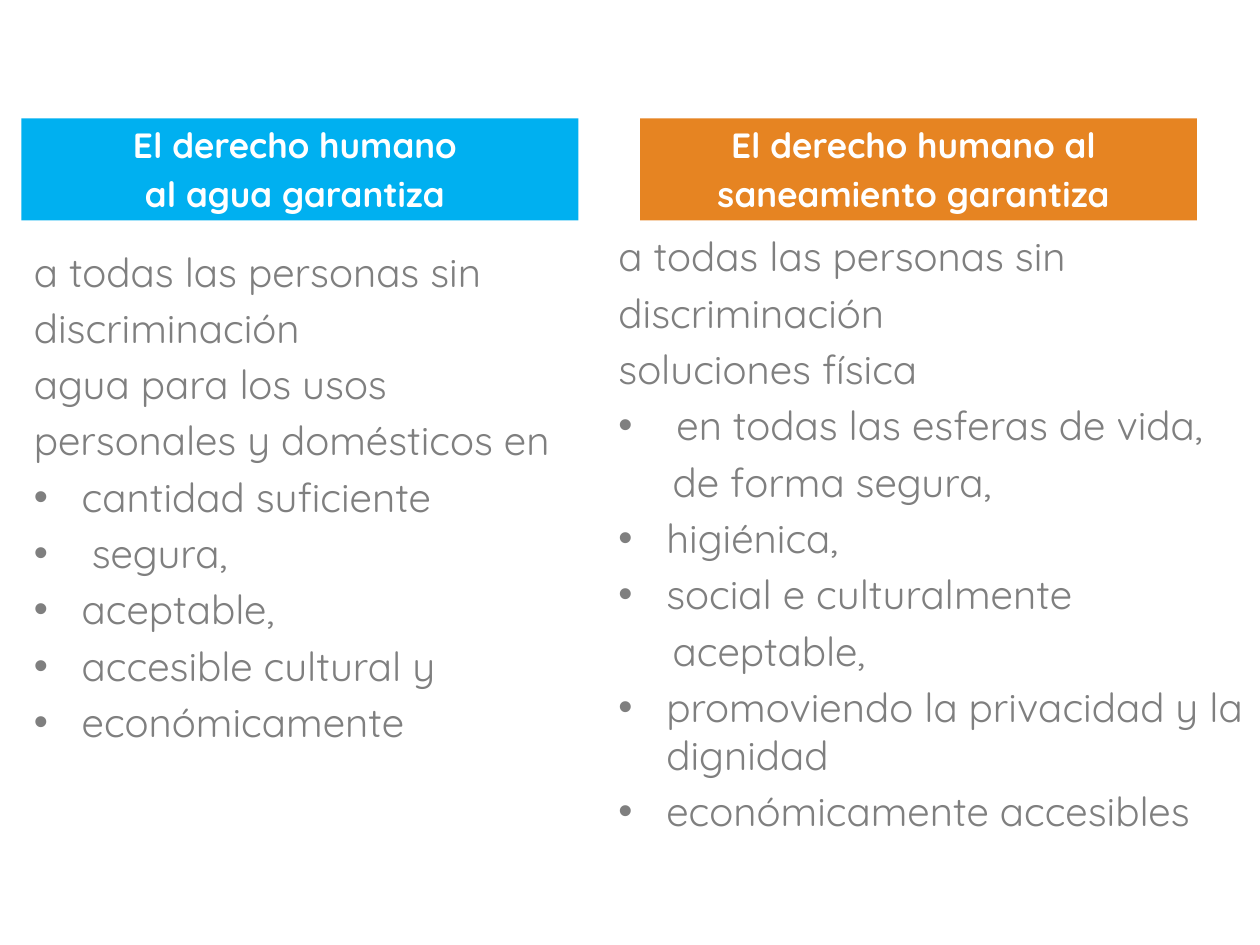
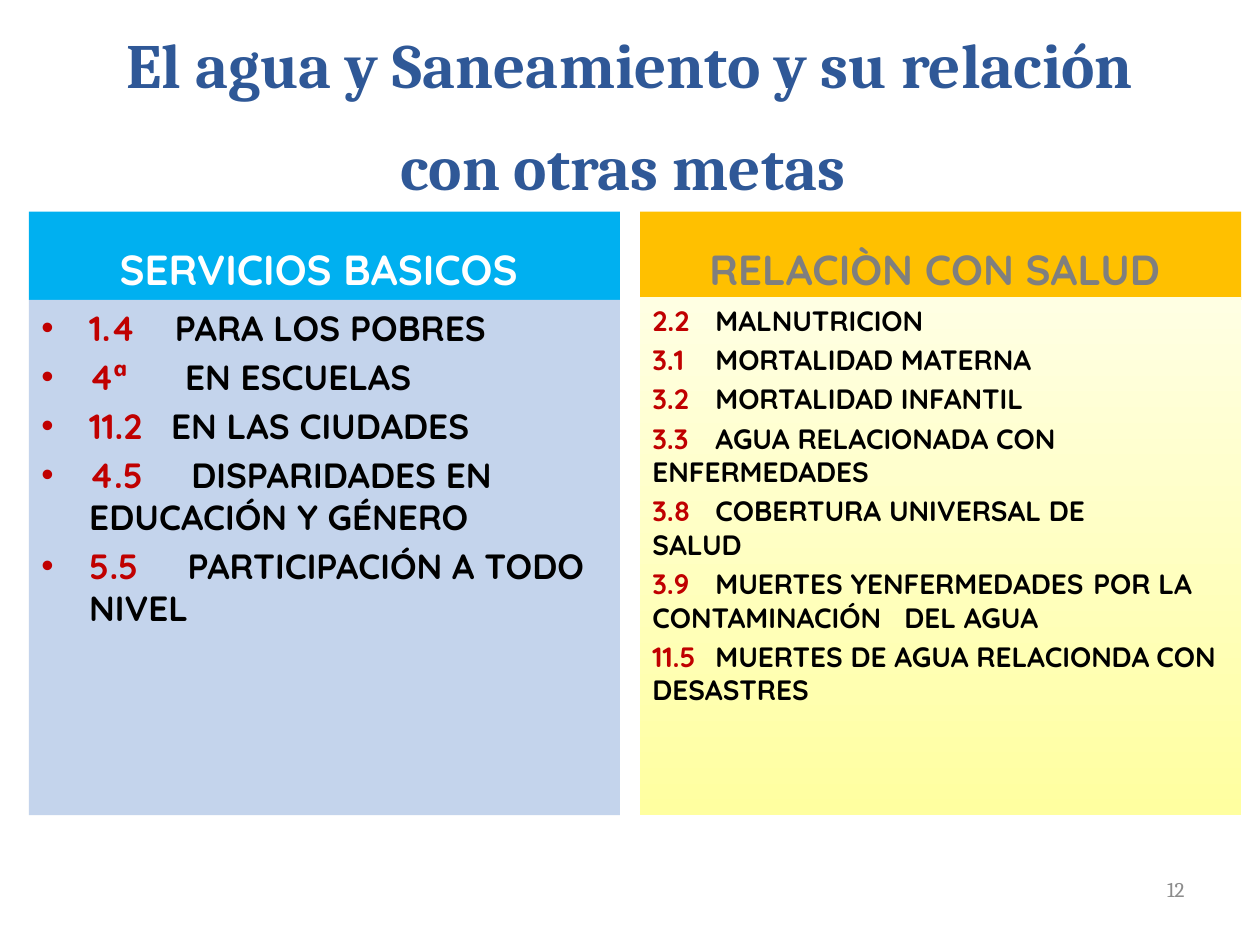
from lxml import etree
from pptx import Presentation
from pptx.dml.color import RGBColor
from pptx.enum.shapes import MSO_SHAPE
from pptx.enum.text import MSO_ANCHOR, PP_ALIGN
from pptx.oxml.ns import qn
from pptx.util import Inches, Pt

RECTANGLE = MSO_SHAPE.RECTANGLE
TOP, MIDDLE, BOTTOM = MSO_ANCHOR.TOP, MSO_ANCHOR.MIDDLE, MSO_ANCHOR.BOTTOM
LEFT, CENTER, RIGHT = PP_ALIGN.LEFT, PP_ALIGN.CENTER, PP_ALIGN.RIGHT

BODY_FONT, TITLE_FONT = "Quicksand", "Cambria"
COLORS = {
    "white": "FFFFFF", "black": "000000", "gray": "7F7F7F", "number": "8C8C8C",
    "title": "2F5897", "code": "C00000", "water": "00B0F0",
    "sanitation": "E68422", "health": "FFC000", "services_panel": "C4D4EC",
    "panel_bottom": "FFFFA0", "panel_top": "FFFFE3",
}
HANGING = 0.38       # bullet indent
WIDE_HANGING = 0.46  # bullet indent with a slightly wider gap
CONTINUED = 0.43     # indent of a line that continues a bullet

# Each line: text, left indent, whether it has a bullet
WATER_LINES = [
    ("a todas las personas sin", 0, False),
    ("discriminación", 0, False),
    ("agua para los usos", 0, False),
    ("personales y domésticos en", 0, False),
    ("cantidad suficiente", HANGING, True),
    ("segura,", WIDE_HANGING, True),
    ("aceptable,", HANGING, True),
    ("accesible cultural y", HANGING, True),
    ("económicamente", HANGING, True),
]
SANITATION_LINES = [
    ("a todas las personas sin", 0, False),
    ("discriminación", 0, False),
    ("soluciones física", 0, False),
    ("en todas las esferas de vida,", WIDE_HANGING, True),
    ("de forma segura,", CONTINUED, False),
    ("higiénica,", HANGING, True),
    ("social e culturalmente", HANGING, True),
    ("aceptable,", CONTINUED, False),
    ("promoviendo la privacidad y la dignidad", HANGING, True),
    ("económicamente accesibles", HANGING, True),
]
# Each goal: code, label, tab stops in inches
SERVICE_GOALS = [
    ("1.4", "PARA LOS POBRES", [1.06]),
    ("4ª", "EN ESCUELAS", [1.14]),
    ("11.2", "EN LAS CIUDADES", [1.03]),
    ("4.5", "DISPARIDADES EN EDUCACIÓN Y GÉNERO", [1.19]),
    ("5.5", "PARTICIPACIÓN A TODO NIVEL", [1.16]),
]
HEALTH_GOALS = [
    ("2.2", "MALNUTRICION", [0.42]),
    ("3.1", "MORTALIDAD MATERNA", [0.38]),
    ("3.2", "MORTALIDAD INFANTIL", [0.42]),
    ("3.3", "AGUA RELACIONADA CON ENFERMEDADES", [0.42]),
    ("3.8", "COBERTURA UNIVERSAL DE\vSALUD", [0.43]),
    ("3.9", "MUERTES YENFERMEDADES\tPOR LA CONTAMINACIÓN\tDEL AGUA", [0.48, 3, 4]),
    ("11.5", "MUERTES DE AGUA RELACIONDA\tCON DESASTRES", [0.41, 4]),
]


def add_box(page, box, fill=None, anchor=TOP):
    """Add a wrapping text box, or a filled rectangle when a colour is given."""
    lengths = [Inches(value) for value in box]
    if fill:
        shape = page.shapes.add_shape(RECTANGLE, *lengths)
        shape.shadow.inherit = False
        shape.fill.solid()
        shape.fill.fore_color.rgb = RGBColor.from_string(COLORS[fill])
        shape.line.fill.background()
    else:
        shape = page.shapes.add_textbox(*lengths)
    shape.text_frame.word_wrap = True
    shape.text_frame.vertical_anchor = anchor
    return shape


def style_span(span, size, color, bold=False, font=BODY_FONT):
    span.font.name = font
    span.font.size = Pt(size)
    span.font.bold = bold
    span.font.color.rgb = RGBColor.from_string(COLORS[color])


def add_paragraph(frame, index, size, align=LEFT):
    """Return the paragraph at index, spaced by a fifth of the text size."""
    para = frame.add_paragraph() if index else frame.paragraphs[0]
    para.alignment = align
    if index:
        para.space_before = Pt(round(size * 0.2, 1))
    return para


def set_layout(para, indent=0, bullet=False, tabs=()):
    properties = para._p.get_or_add_pPr()
    properties.set("marL", str(Inches(indent)))
    properties.set("indent", str(-Inches(indent) if bullet else 0))
    if bullet:
        etree.SubElement(properties, qn("a:buFont"), typeface="Arial")
        etree.SubElement(properties, qn("a:buChar"), char="•")
    if tabs:
        stops = etree.SubElement(properties, qn("a:tabLst"))
        for stop in tabs:
            etree.SubElement(stops, qn("a:tab"), pos=str(Inches(stop)), algn="l")


def add_header(page, box, lines, fill, size, color="white"):
    frame = add_box(page, box, fill, BOTTOM).text_frame
    for index, line in enumerate(lines):
        para = add_paragraph(frame, index, size, CENTER)
        para.text = line
        style_span(para.runs[0], size, color, bold=True)


def add_guarantees(page, box, lines):
    frame = add_box(page, box).text_frame
    for index, (text, indent, bullet) in enumerate(lines):
        para = add_paragraph(frame, index, 23)
        para.text = text
        set_layout(para, indent, bullet)
        style_span(para.runs[0], 23, "gray")


def add_goals(page, box, goals, fill, size, bullet):
    panel = add_box(page, box, fill)
    for index, (code, label, tabs) in enumerate(goals):
        para = add_paragraph(panel.text_frame, index, size)
        para.text = f"{code}\t{label}"
        set_layout(para, HANGING if bullet else 0, bullet, tabs)
        first = para.runs[0]
        first.text = code
        rest = para.add_run()
        rest.text = f"\t{label}".split("\v")[0]
        first._r.addnext(rest._r)
        for span in para.runs:
            style_span(span, size, "black", bold=True)
        style_span(first, size, "code", bold=True)
    return panel


def add_title(page, box, text):
    frame = add_box(page, box).text_frame
    frame.margin_top = frame.margin_bottom = 0
    frame.text = text
    para = frame.paragraphs[0]
    para.alignment = CENTER
    para.line_spacing = Pt(58)
    for span in para.runs:
        style_span(span, 36, "title", bold=True, font=TITLE_FONT)


def add_page_number(page, box, number):
    frame = add_box(page, box, anchor=MIDDLE).text_frame
    frame.text = str(number)
    frame.paragraphs[0].alignment = RIGHT
    style_span(frame.paragraphs[0].runs[0], 12, "number", font=TITLE_FONT)


def build_rights_page(page):
    # Sanitation column
    add_header(page, (5.08, 0.94, 4.42, 0.81),
               ["El derecho humano al ", "saneamiento garantiza "], "sanitation", 20)
    add_guarantees(page, (4.81, 1.79, 5.19, 5.23), SANITATION_LINES)
    # Water column
    add_header(page, (0.17, 0.94, 4.42, 0.81),
               ["El derecho humano ", "al agua garantiza "], "water", 20)
    add_guarantees(page, (0.17, 1.91, 4.75, 4.49), WATER_LINES)


def build_goals_page(page):
    add_title(page, (0.5, 0, 9, 1.62),
              "El agua y Saneamiento y su relación\vcon otras metas ")
    # Basic services
    add_header(page, (0.23, 1.68, 4.69, 0.7), ["SERVICIOS BASICOS "], "water", 24)
    add_goals(page, (0.23, 2.38, 4.69, 4.09), SERVICE_GOALS,
              "services_panel", 20, bullet=True)
    # Health
    add_header(page, (5.08, 1.68, 4.77, 0.7), ["RELACIÒN CON SALUD "],
               "health", 24, "gray")
    panel = add_goals(page, (5.08, 2.36, 4.77, 4.11), HEALTH_GOALS,
                      "panel_top", 16, bullet=False)
    panel.fill.gradient()
    panel.fill.gradient_angle = 90
    for stop, name in zip(panel.fill.gradient_stops, ("panel_bottom", "panel_top")):
        stop.color.rgb = RGBColor.from_string(COLORS[name])
    add_page_number(page, (7.17, 6.86, 2.33, 0.4), 12)


def main():
    deck = Presentation()
    deck.slide_width, deck.slide_height = Inches(10), Inches(7.5)
    for build in (build_rights_page, build_goals_page):
        build(deck.slides.add_slide(deck.slide_layouts[6]))
    deck.save("out.pptx")


if __name__ == "__main__":
    main()
